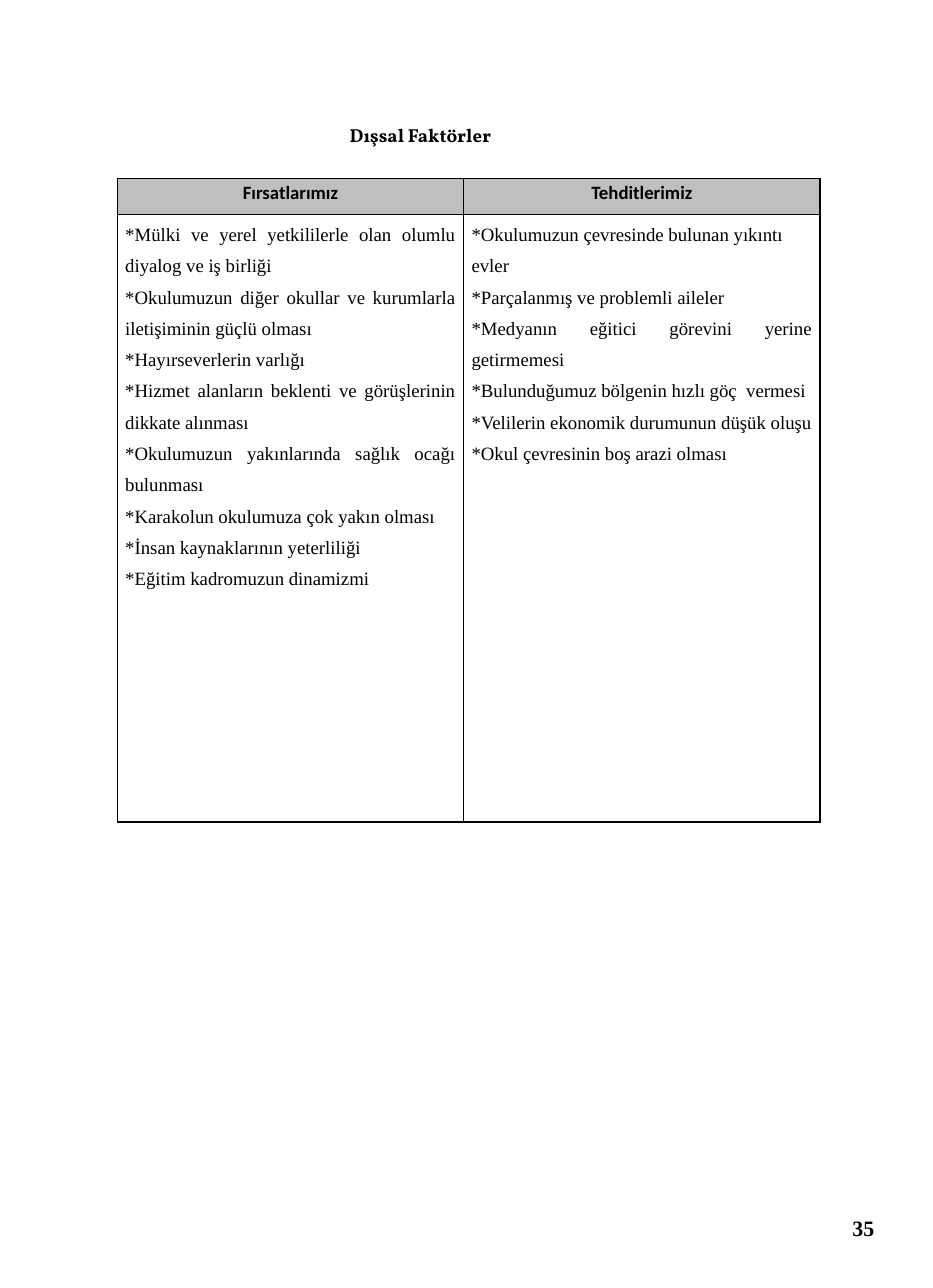
from dataclasses import dataclass

from lxml.etree import SubElement
from pptx import Presentation
from pptx.dml.color import RGBColor
from pptx.enum.text import MSO_ANCHOR, MSO_AUTO_SIZE, PP_ALIGN
from pptx.oxml.ns import qn
from pptx.table import _Cell
from pptx.text.text import TextFrame, _Paragraph
from pptx.util import Emu, Pt

BLACK = RGBColor(0x00, 0x00, 0x00)
HEADER_GRAY = RGBColor(0xBF, 0xBF, 0xBF)
SERIF = "Times New Roman"
EMU_PER_PX = 9144  # 100 px to the inch
COLUMN_WIDTHS = (307, 316)
HEADER_HEIGHT, BODY_HEIGHT = 32, 539


@dataclass
class Factor:
    text: str
    align: PP_ALIGN = PP_ALIGN.JUSTIFY


@dataclass
class FactorColumn:
    heading: str
    factors: list[Factor]


COLUMNS = [
    FactorColumn("Fırsatlarımız", [
        Factor("*Mülki ve yerel yetkililerle olan olumlu diyalog ve iş birliği"),
        Factor("*Okulumuzun diğer okullar ve kurumlarla iletişiminin güçlü olması"),
        Factor("*Hayırseverlerin varlığı"),
        Factor("*Hizmet alanların beklenti ve görüşlerinin dikkate alınması"),
        Factor("*Okulumuzun yakınlarında sağlık ocağı bulunması"),
        Factor("*Karakolun okulumuza çok yakın olması"),
        Factor("*İnsan kaynaklarının yeterliliği"),
        Factor("*Eğitim kadromuzun dinamizmi"),
    ]),
    FactorColumn("Tehditlerimiz", [
        Factor("*Okulumuzun çevresinde bulunan yıkıntı evler", PP_ALIGN.LEFT),
        Factor("*Parçalanmış ve problemli aileler"),
        Factor("*Medyanın eğitici görevini yerine getirmemesi"),
        Factor("*Bulunduğumuz bölgenin hızlı göç  vermesi"),
        Factor("*Velilerin ekonomik durumunun düşük oluşu"),
        Factor("*Okul çevresinin boş arazi olması"),
    ]),
]


def px(n: int) -> Emu:
    return Emu(n * EMU_PER_PX)


def set_margins(box: TextFrame | _Cell, across: int, down: int) -> None:
    box.margin_left = box.margin_right = px(across)
    box.margin_top = box.margin_bottom = px(down)


def write(p: _Paragraph, text: str, font: str, size: int, align: PP_ALIGN,
          bold: bool = True, spacing: float = 1.0) -> None:
    p.text = text
    p.alignment = align
    p.line_spacing = spacing
    p.font.name, p.font.size, p.font.bold = font, Pt(size), bold
    p.font.color.rgb = BLACK


def set_borders(cell: _Cell) -> None:
    tc_pr = cell._tc.get_or_add_tcPr()
    for side in ("a:lnL", "a:lnR", "a:lnT", "a:lnB"):
        ln = SubElement(tc_pr, qn(side), w=str(Pt(1)))
        fill = SubElement(ln, qn("a:solidFill"))
        SubElement(fill, qn("a:srgbClr"), val=str(BLACK))


def format_cell(cell: _Cell) -> None:
    set_margins(cell, 7, 0)
    cell.vertical_anchor = MSO_ANCHOR.TOP
    set_borders(cell)


def main() -> None:
    prs = Presentation()
    prs.slide_width, prs.slide_height = px(827), px(1142)
    s = prs.slides.add_slide(prs.slide_layouts[5])

    # Title
    title = s.shapes.title
    title.left, title.top, title.width, title.height = px(300), px(105), px(232), px(30)
    tf = title.text_frame
    tf.word_wrap = True
    tf.auto_size = MSO_AUTO_SIZE.SHAPE_TO_FIT_TEXT
    tf.vertical_anchor = MSO_ANCHOR.TOP
    set_margins(tf, 10, 5)
    write(tf.paragraphs[0], "Dışsal Faktörler", "Vollkorn", 12, PP_ALIGN.LEFT)

    # Table of opportunities and threats
    table = s.shapes.add_table(2, len(COLUMNS), px(104), px(158), px(sum(COLUMN_WIDTHS)),
                               px(HEADER_HEIGHT + BODY_HEIGHT)).table
    table.first_row = table.horz_banding = False
    table.rows[0].height, table.rows[1].height = px(HEADER_HEIGHT), px(BODY_HEIGHT)
    for i, (column, width) in enumerate(zip(COLUMNS, COLUMN_WIDTHS)):
        table.columns[i].width = px(width)
        head, body = table.cell(0, i), table.cell(1, i)
        format_cell(head)
        head.fill.solid()
        head.fill.fore_color.rgb = HEADER_GRAY
        write(head.text_frame.paragraphs[0], column.heading, "Calibri", 12,
              PP_ALIGN.CENTER, spacing=1.15)
        format_cell(body)
        body.fill.background()
        tf = body.text_frame
        for j, factor in enumerate(column.factors):
            p = tf.add_paragraph() if j else tf.paragraphs[0]
            write(p, factor.text, SERIF, 12, factor.align, bold=False, spacing=1.5)

    # Page number
    tf = s.shapes.add_textbox(px(593), px(1058), px(193), px(61)).text_frame
    tf.word_wrap = True
    tf.vertical_anchor = MSO_ANCHOR.MIDDLE
    set_margins(tf, 11, 6)
    write(tf.paragraphs[0], "35", SERIF, 14, PP_ALIGN.RIGHT)

    prs.save("out.pptx")


if __name__ == "__main__":
    main()
